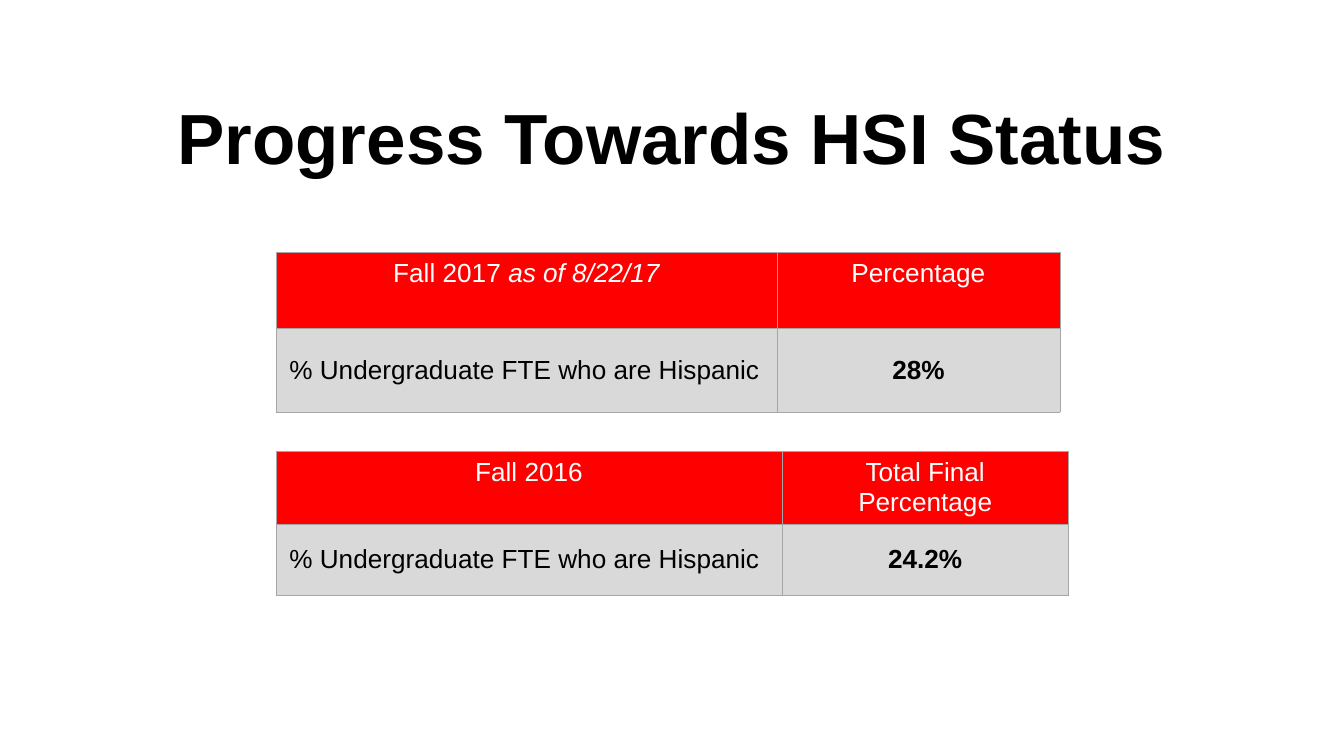
from dataclasses import dataclass

from lxml import etree
from pptx import Presentation
from pptx import util as u
from pptx.dml.color import RGBColor
from pptx.enum import text
from pptx.oxml import ns


@dataclass(frozen=True)
class Theme:
    font: str = "Arial"
    title_size: float = 38
    table_size: float = 14
    ink: str = "000000"
    header_ink: str = "FFFFFF"
    header_fill: str = "FF0000"
    body_fill: str = "D9D9D9"
    border: str = "A6A6A6"
    border_width: float = 0.25


class SlideBuilder:
    def __init__(self, slide, theme):
        self.slide = slide
        self.theme = theme

    def style(self, run, size, color, bold=False, italic=False):
        font = run.font
        font.name, font.size = self.theme.font, u.Pt(size)
        font.bold, font.italic = bold, italic
        font.color.rgb = RGBColor.from_string(color)

    def title(self, wording, left, top, width, height):
        shape = self.slide.shapes.title
        shape.left, shape.top = u.Pt(left), u.Pt(top)
        shape.width, shape.height = u.Pt(width), u.Pt(height)
        frame = shape.text_frame
        frame.text = wording
        frame.vertical_anchor = text.MSO_ANCHOR.MIDDLE
        paragraph = frame.paragraphs[0]
        paragraph.alignment = text.PP_ALIGN.CENTER
        self.style(paragraph.runs[0], self.theme.title_size, self.theme.ink, bold=True)

    def border(self, cell):
        properties = cell._tc.get_or_add_tcPr()
        # Border lines must come before the fill
        for index, side in enumerate(("lnL", "lnR", "lnT", "lnB")):
            line = etree.Element(ns.qn(f"a:{side}"), w=str(u.Pt(self.theme.border_width)))
            fill = etree.SubElement(line, ns.qn("a:solidFill"))
            etree.SubElement(fill, ns.qn("a:srgbClr"), val=self.theme.border)
            properties.insert(index, line)

    def cell(self, cell, wording, header, label):
        theme = self.theme
        cell.fill.solid()
        cell.fill.fore_color.rgb = RGBColor.from_string(
            theme.header_fill if header else theme.body_fill)
        self.border(cell)
        cell.vertical_anchor = text.MSO_ANCHOR.TOP if header else text.MSO_ANCHOR.MIDDLE
        cell.text_frame.text = wording
        for paragraph in cell.text_frame.paragraphs:
            paragraph.alignment = (text.PP_ALIGN.LEFT if label and not header
                                   else text.PP_ALIGN.CENTER)
            for run in paragraph.runs:
                self.style(run, theme.table_size,
                           theme.header_ink if header else theme.ink,
                           bold=not header and not label)

    def table(self, rows, left, top, column_widths, row_heights, note=""):
        table = self.slide.shapes.add_table(
            len(rows), len(column_widths), u.Pt(left), u.Pt(top),
            u.Pt(sum(column_widths)), u.Pt(sum(row_heights))).table
        for column, width in zip(table.columns, column_widths):
            column.width = u.Pt(width)
        for row, height in zip(table.rows, row_heights):
            row.height = u.Pt(height)
        for i, row in enumerate(rows):
            for j, wording in enumerate(row):
                self.cell(table.cell(i, j), wording, header=i == 0, label=j == 0)
        # Italic note after the first heading
        if note:
            run = table.cell(0, 0).text_frame.paragraphs[0].add_run()
            run.text = note
            self.style(run, self.theme.table_size, self.theme.header_ink, italic=True)


def main():
    presentation = Presentation()
    presentation.slide_width, presentation.slide_height = u.Pt(720), u.Pt(405)
    slide = presentation.slides.add_slide(presentation.slide_layouts[5])
    builder = SlideBuilder(slide, Theme())

    # Title
    builder.title("Progress Towards HSI Status", 36, 39, 648, 67.5)

    # One table per term, aligned on the left
    table_left = 147.8
    measure = "% Undergraduate FTE who are Hispanic"
    builder.table([("Fall 2017 ", "Percentage"), (measure, "28%")],
                  table_left, 135.2, (268.5, 151.5), (40.6, 45), note="as of 8/22/17")
    builder.table([("Fall 2016", "Total Final\nPercentage"), (measure, "24.2%")],
                  table_left, 241.8, (271.3, 153.2), (39, 38.2))

    presentation.save("out.pptx")


if __name__ == "__main__":
    main()
